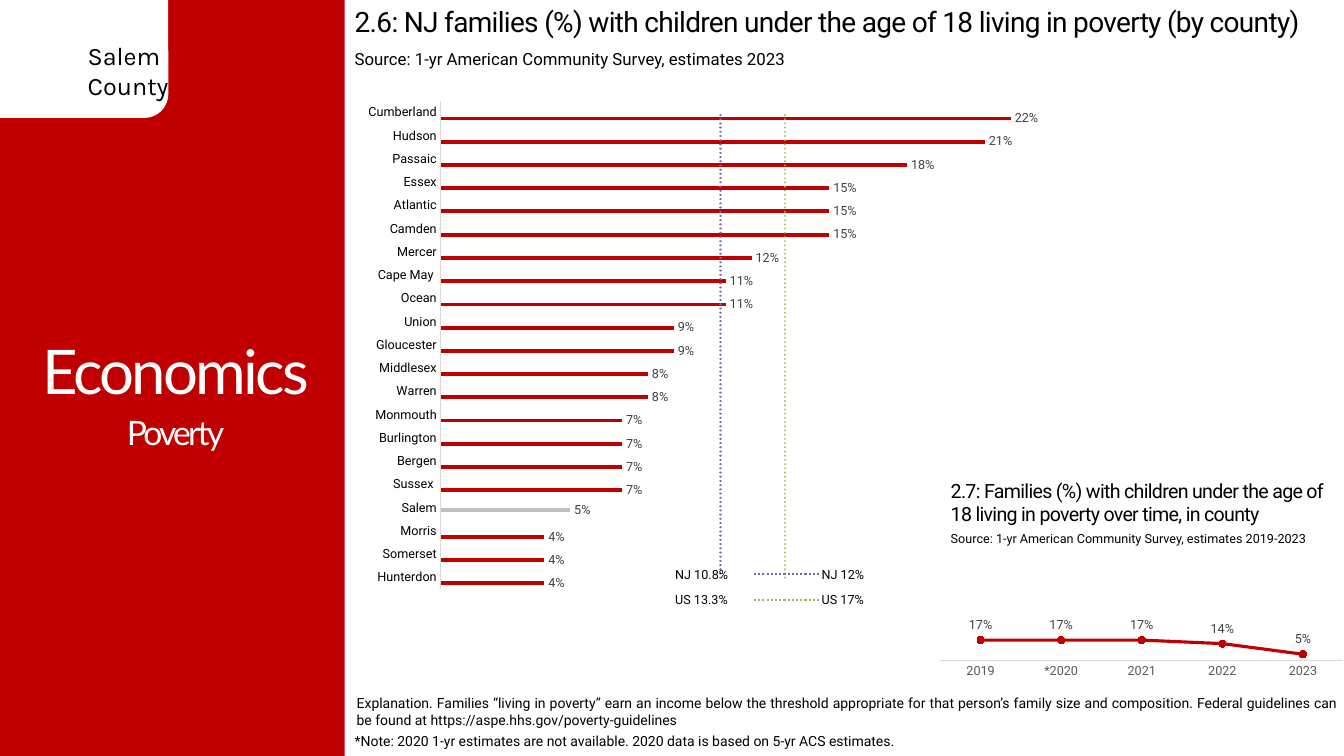
"""Build the Salem County poverty slide with its two charts."""
import lxml.etree
import pptx
import pptx.chart.data
import pptx.dml.color
import pptx.enum.chart
import pptx.enum.dml
import pptx.enum.shapes
import pptx.enum.text
import pptx.oxml
import pptx.oxml.ns
import pptx.util

RED, GREY, WHITE, BLACK = "C00000", "BFBFBF", "FFFFFF", "000000"
LABEL, AXIS_LINE, GREEN, PURPLE = "404040", "D9D9D9", "9BBB59", "8064A2"
SLIDE_SIZE = (13.33, 7.5)

SIDEBAR = (0, 0, 25.65, 100)
COUNTY_TAB = (-2.48, -3.33, 15, 18.93)

TEXTS = [
    ("Salem\nCounty", (5.78, 4.67, 7.5, 9.47), {"size": 18, "font": "Karla"}),
    ("2.6: NJ families (%) with children under the age of 18 living in poverty (by county)",
     (25.65, 0, 75.2, 5.87), {"size": 20, "spacing": -0.5}),
    ("Source: 1-yr American Community Survey, estimates 2023",
     (25.65, 5.73, 52.9, 4), {"size": 12}),
    ("Explanation. Families “living in poverty” earn an income below the threshold "
     "appropriate for that person’s family size and composition. Federal guidelines can "
     "be found at https://aspe.hhs.gov/poverty-guidelines",
     (25.8, 90.8, 74.4, 6.67), {"size": 10, "align": "JUSTIFY", "middle": True}),
    ("2.7: Families (%) with children under the age of 18 living in poverty over time, in county",
     (70, 62.67, 29.4, 7.6), {"size": 14, "spacing": -0.5}),
    ("Source: 1-yr American Community Survey, estimates 2019-2023",
     (70, 69.6, 30, 3.33), {"size": 9}),
    ("Economics", (0.23, 42.93, 25.65, 13.33),
     {"size": 44, "font": "Lato", "color": WHITE, "spacing": -2, "align": "CENTER",
      "middle": True, "leading": 0.9}),
    ("Poverty", (0.23, 50.8, 25.65, 13.33),
     {"size": 24, "font": "Lato", "color": WHITE, "spacing": -2, "align": "CENTER",
      "middle": True, "leading": 0.9}),
    ("*Note: 2020 1-yr estimates are not available. 2020 data is based on 5-yr ACS estimates.",
     (25.65, 96.27, 52.9, 3.6), {"size": 10}),
]

COUNTIES = [
    ("Hunterdon", 0.04), ("Somerset", 0.04), ("Morris", 0.04), ("Salem", 0.05),
    ("Sussex ", 0.07), ("Bergen", 0.07), ("Burlington", 0.07), ("Monmouth", 0.07),
    ("Warren", 0.08), ("Middlesex", 0.08), ("Gloucester", 0.09), ("Union", 0.09),
    ("Ocean", 0.11), ("Cape May ", 0.11), ("Mercer", 0.12), ("Camden", 0.15),
    ("Atlantic", 0.15), ("Essex", 0.15), ("Passaic", 0.18), ("Hudson", 0.21),
    ("Cumberland", 0.22),
]
HIGHLIGHT = "Salem"
BENCHMARKS = [("US 13.3%", 0.133, GREEN), ("NJ 10.8%", 0.108, PURPLE)]
YEARS = [("2019", 0.17), ("*2020", 0.17), ("2021", 0.17), ("2022", 0.14), ("2023", 0.05)]

COUNTY_CHART = (25.88, 11.2, 61.65, 78)
COUNTY_PLOT = (0.112, 0.028, 0.782, 0.828)
YEAR_CHART = (69.38, 69.6, 30.6, 22.13)
YEAR_PLOT = (0.019, 0.099, 0.981, 0.702)

KEY_ROWS = [("NJ 10.8%", "NJ 12%", PURPLE), ("US 13.3%", "US 17%", GREEN)]
KEY_TOP, KEY_STEP, KEY_HEIGHT = 74.27, 3.43, 3.33
KEY_COLUMNS, KEY_WIDTH, KEY_LINE = (49.5, 60.4), 7, (56.1, 61)


def rgb(color):
    """Turn a hex string into a colour."""
    return pptx.dml.color.RGBColor.from_string(color)


def across(share):
    """Turn a percentage of the slide width into a length."""
    return pptx.util.Inches(SLIDE_SIZE[0] * share / 100)


def down(share):
    """Turn a percentage of the slide height into a length."""
    return pptx.util.Inches(SLIDE_SIZE[1] * share / 100)


def place(area):
    """Turn left, top, width and height percentages into lengths."""
    left, top, width, height = area
    return across(left), down(top), across(width), down(height)


def style(font, size, color=BLACK, name="Roboto"):
    """Set size, colour and typeface of a font."""
    font.size, font.name = pptx.util.Pt(size), name
    font.color.rgb = rgb(color)


def add_panel(page, kind, area, color):
    """Add a plain filled shape."""
    panel = page.shapes.add_shape(kind, *place(area))
    panel.shadow.inherit = False
    panel.fill.solid()
    panel.fill.fore_color.rgb = rgb(color)
    panel.line.fill.background()


def add_text(page, text, area, size, font="Roboto", color=BLACK, spacing=0,
             align="LEFT", middle=False, leading=None):
    """Add a wrapped text box."""
    frame = page.shapes.add_textbox(*place(area)).text_frame
    frame.word_wrap = True
    anchors = pptx.enum.text.MSO_ANCHOR
    frame.vertical_anchor = anchors.MIDDLE if middle else anchors.TOP
    frame.text = text
    for para in frame.paragraphs:
        para.alignment = pptx.enum.text.PP_ALIGN[align]
        para.line_spacing = leading
        for span in para.runs:
            style(span.font, size, color, font)
            if spacing:
                span._r.get_or_add_rPr().set("spc", str(int(spacing * 100)))


def add_dotted_line(page, left, right, level, color):
    """Add a horizontal dotted line."""
    line = page.shapes.add_connector(
        pptx.enum.shapes.MSO_CONNECTOR.STRAIGHT,
        across(left), down(level), across(right), down(level))
    line.line.color.rgb = rgb(color)
    line.line.width = pptx.util.Pt(1.5)
    line.line.dash_style = pptx.enum.dml.MSO_LINE.ROUND_DOT
    lxml.etree.SubElement(line._element.spPr, pptx.oxml.ns.qn("a:effectLst"))


def add_chart(page, kind, area, plot_area, categories, series, top, label_color):
    """Add a chart with a hidden value axis and a fixed plot area."""
    data = pptx.chart.data.CategoryChartData(number_format="0%")
    data.categories = categories
    for name, values in series:
        data.add_series(name, values)
    chart = page.shapes.add_chart(kind, *place(area), data).chart
    chart.has_title = chart.has_legend = False
    style(chart.font, 10, name="Calibri")
    chart.plots[0].vary_by_categories = False
    chart.value_axis.visible = chart.value_axis.has_major_gridlines = False
    chart.value_axis.minimum_scale, chart.value_axis.maximum_scale = 0, top
    axis = chart.category_axis
    axis.major_tick_mark = pptx.enum.chart.XL_TICK_MARK.NONE
    axis.format.line.color.rgb = rgb(AXIS_LINE)
    axis.format.line.width = pptx.util.Pt(0.75)
    style(axis.tick_labels.font, 9, label_color)
    plot = chart._chartSpace.find(".//" + pptx.oxml.ns.qn("c:plotArea"))
    for layout in plot.findall(pptx.oxml.ns.qn("c:layout")):
        plot.remove(layout)
    sizes = "".join(f'<c:{tag} val="{share}"/>' for tag, share in zip("xywh", plot_area))
    plot.insert(0, pptx.oxml.parse_xml(
        f'<c:layout {pptx.oxml.ns.nsdecls("c")}><c:manualLayout><c:layoutTarget val="inner"/>'
        f'<c:xMode val="edge"/><c:yMode val="edge"/>{sizes}</c:manualLayout></c:layout>'))
    return chart


def show_values(series, position):
    """Label each point with its percentage."""
    labels = series.data_labels
    labels.show_value = True
    labels.number_format, labels.number_format_is_linked = "0%", False
    labels.position = pptx.enum.chart.XL_LABEL_POSITION[position]
    style(labels.font, 9, LABEL)


def add_trend(series, color):
    """Add a dotted linear trend line."""
    trend = pptx.oxml.parse_xml(
        f'<c:trendline {pptx.oxml.ns.nsdecls("c", "a")}><c:spPr><a:ln w="19050" cap="rnd">'
        f'<a:solidFill><a:srgbClr val="{color}"/></a:solidFill><a:prstDash val="sysDot"/></a:ln>'
        '</c:spPr><c:trendlineType val="linear"/><c:dispRSqr val="0"/><c:dispEq val="0"/>'
        '</c:trendline>')
    series._element.find(pptx.oxml.ns.qn("c:cat")).addprevious(trend)


def add_county_chart(page):
    """Add the county bars with the state and national lines."""
    names = [name for name, _ in COUNTIES]
    series = [("Poverty Rate", [None if name == HIGHLIGHT else rate for name, rate in COUNTIES]),
              ("County", [rate if name == HIGHLIGHT else None for name, rate in COUNTIES])]
    series += [(name, [rate] * len(names)) for name, rate, _ in BENCHMARKS]
    chart = add_chart(page, pptx.enum.chart.XL_CHART_TYPE.BAR_CLUSTERED, COUNTY_CHART,
                      COUNTY_PLOT, names, series, 0.25, BLACK)
    plot = chart.plots[0]
    plot.gap_width, plot.overlap = 219, 0
    bars = list(plot.series)
    for bar, color in zip(bars, (RED, GREY, WHITE, WHITE)):
        bar.format.fill.solid()
        bar.format.fill.fore_color.rgb = rgb(color)
    for bar in bars[:2]:
        show_values(bar, "OUTSIDE_END")
    for bar, (_, _, color) in zip(bars[2:], BENCHMARKS):
        add_trend(bar, color)


def add_year_chart(page):
    """Add the line of yearly rates."""
    years, rates = zip(*YEARS)
    chart = add_chart(page, pptx.enum.chart.XL_CHART_TYPE.LINE_MARKERS, YEAR_CHART, YEAR_PLOT,
                      years, [("Poverty Rate", rates)], 1, "595959")
    line = chart.plots[0].series[0]
    line.smooth = False
    line.format.line.color.rgb = rgb(RED)
    line.format.line.width = pptx.util.Pt(2.25)
    line.marker.style, line.marker.size = pptx.enum.chart.XL_MARKER_STYLE.CIRCLE, 5
    line.marker.format.fill.solid()
    line.marker.format.fill.fore_color.rgb = rgb(RED)
    line.marker.format.line.color.rgb = rgb(RED)
    show_values(line, "ABOVE")


def main():
    """Build and save the slide."""
    deck = pptx.Presentation()
    deck.slide_width, deck.slide_height = map(pptx.util.Inches, SLIDE_SIZE)
    page = deck.slides.add_slide(deck.slide_layouts[6])
    kinds = pptx.enum.shapes.MSO_SHAPE
    add_panel(page, kinds.RECTANGLE, SIDEBAR, RED)
    add_panel(page, kinds.ROUNDED_RECTANGLE, COUNTY_TAB, WHITE)
    add_county_chart(page)
    add_year_chart(page)
    for text, area, look in TEXTS:
        add_text(page, text, area, **look)
    for row, (*labels, color) in enumerate(KEY_ROWS):
        top = KEY_TOP + row * KEY_STEP
        add_dotted_line(page, *KEY_LINE, top + KEY_HEIGHT / 2, color)
        for left, label in zip(KEY_COLUMNS, labels):
            add_text(page, label, (left, top, KEY_WIDTH, KEY_HEIGHT), 9, middle=True)
    deck.save("out.pptx")


if __name__ == "__main__":
    main()
